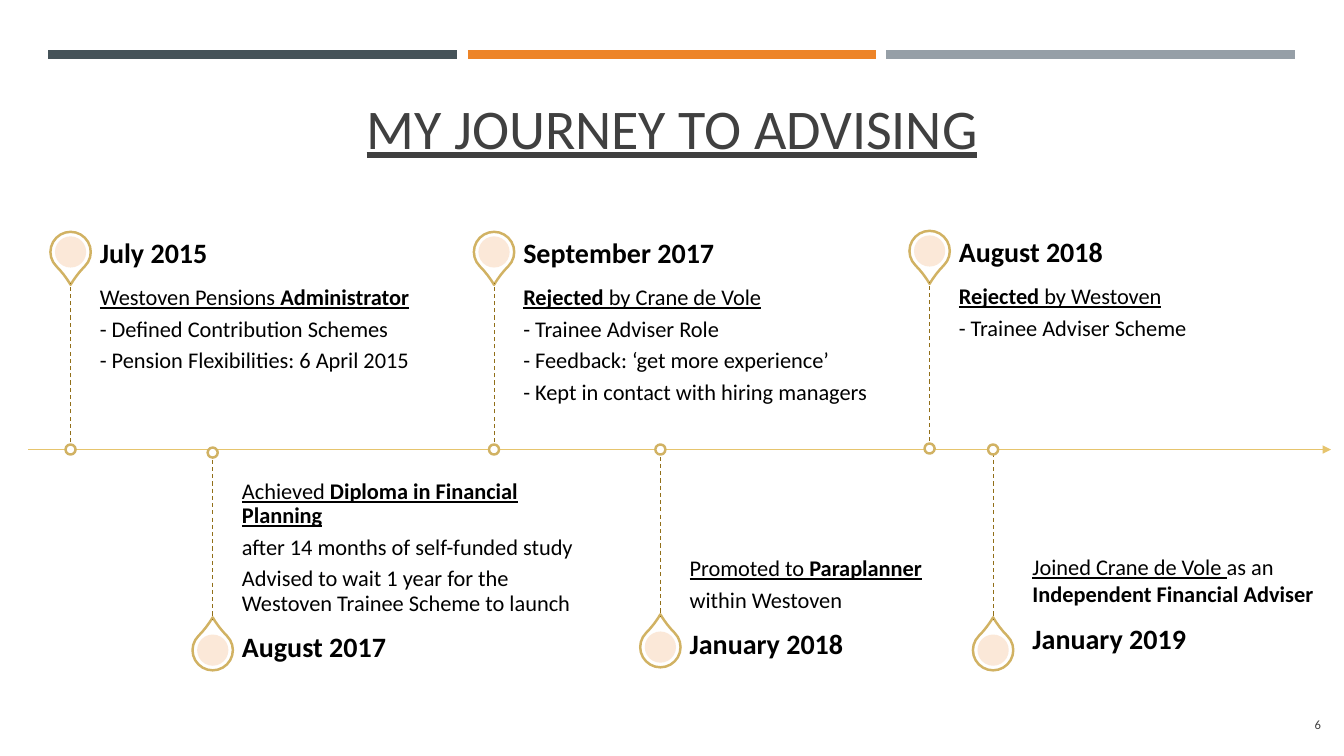
from dataclasses import dataclass
from typing import NamedTuple, Optional

from lxml.etree import SubElement
from pptx import Presentation
from pptx.dml.color import RGBColor
from pptx.enum.dml import MSO_LINE
from pptx.enum.shapes import MSO_CONNECTOR, MSO_SHAPE
from pptx.enum.text import MSO_ANCHOR, PP_ALIGN
from pptx.oxml.ns import qn
from pptx.util import Inches, Pt

COLORS = {
    "slate": "465359", "orange": "ED8428", "grey": "969FA7",
    "axis": "E6C46D", "pin": "D1B263", "stem": "916F19",
    "core": "FBE6D4", "white": "FFFFFF", "black": "000000", "heading": "404040",
}
AXIS_Y = 4.46
STEM_LENGTH = 1.65
PIN_DISTANCE = 1.96
PIN_SIZE, CORE_SIZE, DOT_SIZE = 0.4, 0.31, 0.1
TEXT_OFFSET, TEXT_WIDTH, DATE_HEIGHT = 0.29, 3.54, 0.58
FLUSH = (0, 0, 0, 0)
BODY_INSETS = (0, 0.03, 0, 0.03)
STANDARD_INSETS = (0.1, 0.05, 0.1, 0.05)


class Box(NamedTuple):
    left: float
    top: float
    width: float
    height: float


class Run(NamedTuple):
    text: str
    bold: bool = False
    underline: bool = False


@dataclass
class Milestone:
    date: str
    x: float
    body: list[list[Run]]
    above: bool
    start_y: float = AXIS_Y
    dot_y: Optional[float] = None
    date_box: Optional[Box] = None
    body_box: Optional[Box] = None
    line_spacing: float = 0.9


@dataclass
class TextStyle:
    size: float
    color: str = "black"
    anchor: MSO_ANCHOR = MSO_ANCHOR.MIDDLE
    align: PP_ALIGN = PP_ALIGN.LEFT
    insets: tuple = FLUSH
    line_spacing: float = 0.9
    space_after: float = 0


BARS = [("slate", 0.48), ("orange", 4.64), ("grey", 8.79)]
MILESTONES = [
    Milestone("July 2015", 0.7, [
        [Run("Westoven Pensions ", underline=True), Run("Administrator", True, True)],
        [Run("- Defined Contribution Schemes")],
        [Run("- Pension Flexibilities: 6 April 2015")],
    ], above=True),
    Milestone("August 2017", 2.11, [
        [Run("Achieved ", underline=True), Run("Diploma in Financial Planning", True, True)],
        [Run("after 14 months of self-funded study")],
        [Run("Advised to wait 1 year for the Westoven Trainee Scheme to launch")],
    ], above=False, start_y=4.49),
    Milestone("September 2017", 4.9, [
        [Run("Rejected", True, True), Run(" by Crane de Vole", underline=True)],
        [Run("- Trainee Adviser Role")],
        [Run("- Feedback: ‘get more experience’")],
        [Run("- Kept in contact with hiring managers")],
    ], above=True),
    Milestone("January 2018", 6.55, [
        [Run("Promoted to ", underline=True), Run("Paraplanner", True, True)],
        [Run("within Westoven")],
    ], above=False),
    Milestone("August 2018", 9.22, [
        [Run("Rejected", True, True), Run(" by Westoven", underline=True)],
        [Run("- Trainee Adviser Scheme")],
    ], above=True, start_y=4.45),
    Milestone("January 2019", 9.85, [
        [Run("Joined Crane de Vole ", underline=True), Run("as an "),
         Run("Independent Financial Adviser", True)],
    ], above=False, start_y=4.49, dot_y=AXIS_Y,
        date_box=Box(10.24, 6.11, 3.21, 0.49),
        body_box=Box(10.24, 4.64, 2.86, 1.41), line_spacing=1.0),
]


def color(name: str) -> RGBColor:
    return RGBColor.from_string(COLORS[name])


def set_all(target, values: dict) -> None:
    for name, value in values.items():
        setattr(target, name, value)


def add_line(slide, start: tuple, end: tuple, line_color: str, width: float):
    connector = slide.shapes.add_connector(
        MSO_CONNECTOR.STRAIGHT, *(Inches(value) for value in (*start, *end)))
    connector.line.color.rgb = color(line_color)
    connector.line.width = Pt(width)
    SubElement(connector._element.spPr, qn("a:effectLst"))
    return connector


def add_round(slide, kind: MSO_SHAPE, x: float, y: float, size: float,
              fill: str, outlined: bool = True):
    shape = slide.shapes.add_shape(
        kind, Inches(x - size / 2), Inches(y - size / 2), Inches(size), Inches(size))
    shape.shadow.inherit = False
    shape.fill.solid()
    shape.fill.fore_color.rgb = color(fill)
    if outlined:
        shape.line.color.rgb = color("pin")
        shape.line.width = Pt(1.75)
    else:
        shape.line.fill.background()
    return shape


def add_text(slide, box: Box, paragraphs: list[list[Run]], style: TextStyle) -> None:
    frame = slide.shapes.add_textbox(*(Inches(value) for value in box)).text_frame
    left, top, right, bottom = (Inches(value) for value in style.insets)
    set_all(frame, {
        "word_wrap": True, "vertical_anchor": style.anchor,
        "margin_left": left, "margin_top": top,
        "margin_right": right, "margin_bottom": bottom,
    })
    for index, runs in enumerate(paragraphs):
        paragraph = frame.add_paragraph() if index else frame.paragraphs[0]
        set_all(paragraph, {
            "alignment": style.align, "line_spacing": style.line_spacing,
            "space_after": Pt(style.space_after),
        })
        for item in runs:
            run = paragraph.add_run()
            run.text = item.text
            set_all(run.font, {
                "name": "Calibri", "size": Pt(style.size),
                "bold": item.bold, "underline": item.underline,
            })
            run.font.color.rgb = color(style.color)


def add_milestone(slide, milestone: Milestone) -> None:
    x, start_y = milestone.x, milestone.start_y
    direction = -1 if milestone.above else 1
    tip_y = start_y + direction * STEM_LENGTH
    pin_y = start_y + direction * PIN_DISTANCE

    pin = add_round(slide, MSO_SHAPE.TEAR, x, pin_y, PIN_SIZE, "white")
    pin.adjustments[0] = 1.15
    pin.rotation = 135 if milestone.above else 315
    core = add_round(slide, MSO_SHAPE.OVAL, x, pin_y, CORE_SIZE, "core", outlined=False)
    core_color = core._element.spPr.find(qn("a:solidFill"))[0]
    SubElement(core_color, qn("a:alpha")).set("val", "90000")

    text_x = x + TEXT_OFFSET
    date_top = tip_y - DATE_HEIGHT if milestone.above else tip_y
    body_box = milestone.body_box or Box(
        text_x, min(start_y, tip_y), TEXT_WIDTH, STEM_LENGTH)
    date_box = milestone.date_box or Box(text_x, date_top, TEXT_WIDTH, DATE_HEIGHT)
    add_text(slide, body_box, milestone.body, TextStyle(
        16, anchor=MSO_ANCHOR.TOP if milestone.above else MSO_ANCHOR.BOTTOM,
        insets=BODY_INSETS, line_spacing=milestone.line_spacing, space_after=5.3))
    add_text(slide, date_box, [[Run(milestone.date, bold=True)]], TextStyle(20))

    stem = add_line(slide, (x, start_y), (x, tip_y), "stem", 0.75)
    stem.line.dash_style = MSO_LINE.DASH
    add_round(slide, MSO_SHAPE.OVAL, x, milestone.dot_y or start_y, DOT_SIZE, "white")


def main() -> None:
    presentation = Presentation()
    set_all(presentation, {"slide_width": Inches(13.33), "slide_height": Inches(7.5)})
    slide = presentation.slides.add_slide(presentation.slide_layouts[6])
    for bar_color, left in BARS:
        add_line(slide, (left, 0.54), (left + 4.05, 0.54), bar_color, 6.5)
    axis = add_line(slide, (0.28, AXIS_Y), (13.2, AXIS_Y), "axis", 1)
    SubElement(axis.line._get_or_add_ln(), qn("a:tailEnd")).set("type", "triangle")
    for milestone in MILESTONES:
        add_milestone(slide, milestone)
    add_text(slide, Box(0.64, 0.14, 12.05, 1.51),
             [[Run("MY JOURNEY TO ADVISING", underline=True)]],
             TextStyle(40, "heading", MSO_ANCHOR.BOTTOM, PP_ALIGN.CENTER, STANDARD_INSETS))
    add_text(slide, Box(12.69, 7, 0.51, 0.4), [[Run("6")]],
             TextStyle(9, "heading", align=PP_ALIGN.RIGHT, insets=STANDARD_INSETS))
    presentation.save("out.pptx")


if __name__ == "__main__":
    main()
